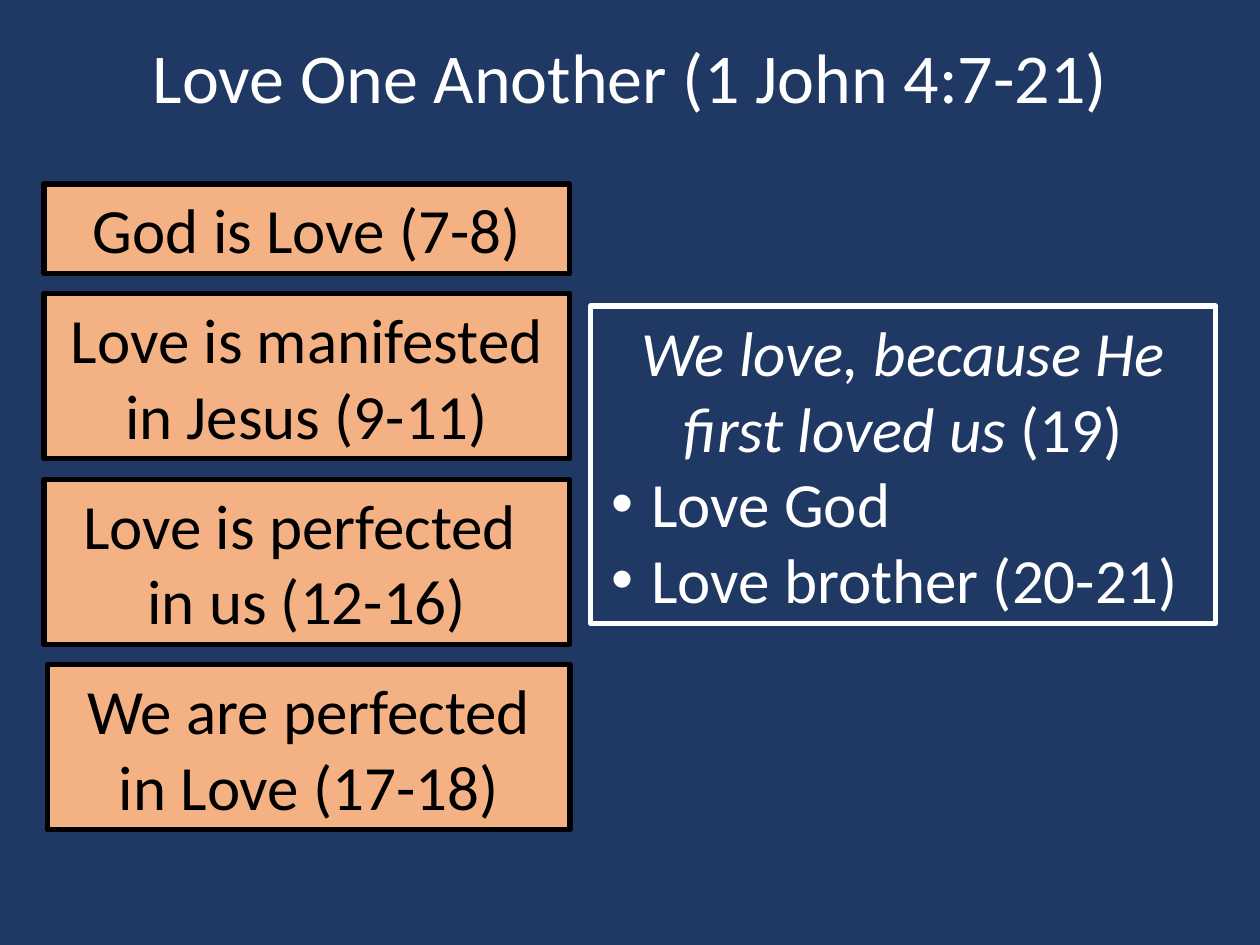
from dataclasses import dataclass

from lxml.etree import SubElement
from pptx import Presentation
from pptx.dml.color import RGBColor
from pptx.enum.shapes import MSO_SHAPE
from pptx.enum.text import MSO_ANCHOR, MSO_AUTO_SIZE, PP_ALIGN
from pptx.oxml.ns import qn
from pptx.util import Cm, Pt


@dataclass(frozen=True)
class Theme:
    """Colours, typeface and type sizes of the slide."""
    navy: RGBColor = RGBColor(0x20, 0x38, 0x64)
    peach: RGBColor = RGBColor(0xF4, 0xB1, 0x83)
    black: RGBColor = RGBColor(0, 0, 0)
    white: RGBColor = RGBColor(0xFF, 0xFF, 0xFF)
    font: str = "Calibri"
    title_size: Pt = Pt(40)
    body_size: Pt = Pt(36)
    border: Pt = Pt(3)


THEME = Theme()
TITLE = "Love One Another (1 John 4:7-21)"
POINTS = [
    ("God is Love (7-8)", 0.89, 10.59, 1.8),
    ("Love is manifested in Jesus (9-11)", 0.89, 10.59, 3.33),
    ("Love is perfected \nin us (12-16)", 0.89, 10.59, 3.33),
    ("We are perfected in Love (17-18)", 0.96, 10.53, 3.33),
]
POINTS_TOP, POINTS_GAP = 3.71, 0.41
QUOTE, VERSE = "We love, because He first loved us", " (19)"
RESPONSES = ["Love God", "Love brother (20-21)"]


def format_text(frame, size, color):
    """Centre the paragraphs and style every run."""
    frame.word_wrap = True
    frame.vertical_anchor = MSO_ANCHOR.MIDDLE
    for para in frame.paragraphs:
        para.alignment = PP_ALIGN.CENTER
        for span in para.runs:
            span.font.name = THEME.font
            span.font.size = size
            span.font.color.rgb = color


def add_title(page):
    """Place and format the title placeholder."""
    title = page.shapes.title
    title.left, title.top = Cm(1.75), Cm(0.58)
    title.width, title.height = Cm(21.9), Cm(2.08)
    title.text_frame.text = TITLE
    title.text_frame.auto_size = MSO_AUTO_SIZE.NONE
    title.text_frame.paragraphs[0].line_spacing = 0.9
    format_text(title.text_frame, THEME.title_size, THEME.white)


def add_box(page, left, top, width, height, line_color, fill=None):
    """Add a bordered rectangle, unfilled unless a fill is given."""
    box = page.shapes.add_shape(
        MSO_SHAPE.RECTANGLE, Cm(left), Cm(top), Cm(width), Cm(height))
    box.shadow.inherit = False
    if fill is None:
        box.fill.background()
    else:
        box.fill.solid()
        box.fill.fore_color.rgb = fill
    box.line.color.rgb = line_color
    box.line.width = THEME.border
    box.text_frame.auto_size = MSO_AUTO_SIZE.SHAPE_TO_FIT_TEXT
    return box


def add_points(page):
    """Stack the main points with equal gaps."""
    top = POINTS_TOP
    for text, left, width, height in POINTS:
        box = add_box(page, left, top, width, height, THEME.black, THEME.peach)
        box.text_frame.text = text
        format_text(box.text_frame, THEME.body_size, THEME.black)
        top += height + POINTS_GAP


def make_bullet(para):
    """Turn a paragraph into a left-aligned bullet with a hanging indent."""
    para.alignment = PP_ALIGN.LEFT
    properties = para._p.get_or_add_pPr()
    properties.set("marL", str(Cm(0.97)))
    properties.set("indent", str(Cm(-0.81)))
    SubElement(properties, qn("a:buFont")).set("typeface", "Arial")
    SubElement(properties, qn("a:buChar")).set("char", "•")


def add_conclusion(page):
    """Add the outlined box with the quoted verse and its responses."""
    box = add_box(page, 11.91, 6.17, 12.6, 6.4, THEME.white)
    frame = box.text_frame
    frame.text = "\n".join([QUOTE, *RESPONSES])
    verse = frame.paragraphs[0]
    verse.runs[0].font.italic = True
    verse.add_run().text = VERSE
    format_text(frame, THEME.body_size, THEME.white)
    for para in frame.paragraphs[1:]:
        make_bullet(para)


def main():
    """Build the slide and save the deck."""
    deck = Presentation()
    deck.slide_width, deck.slide_height = Cm(25.4), Cm(19.05)
    page = deck.slides.add_slide(deck.slide_layouts.get_by_name("Title Only"))
    page.background.fill.solid()
    page.background.fill.fore_color.rgb = THEME.navy
    add_title(page)
    add_points(page)
    add_conclusion(page)
    deck.save("out.pptx")


if __name__ == "__main__":
    main()
